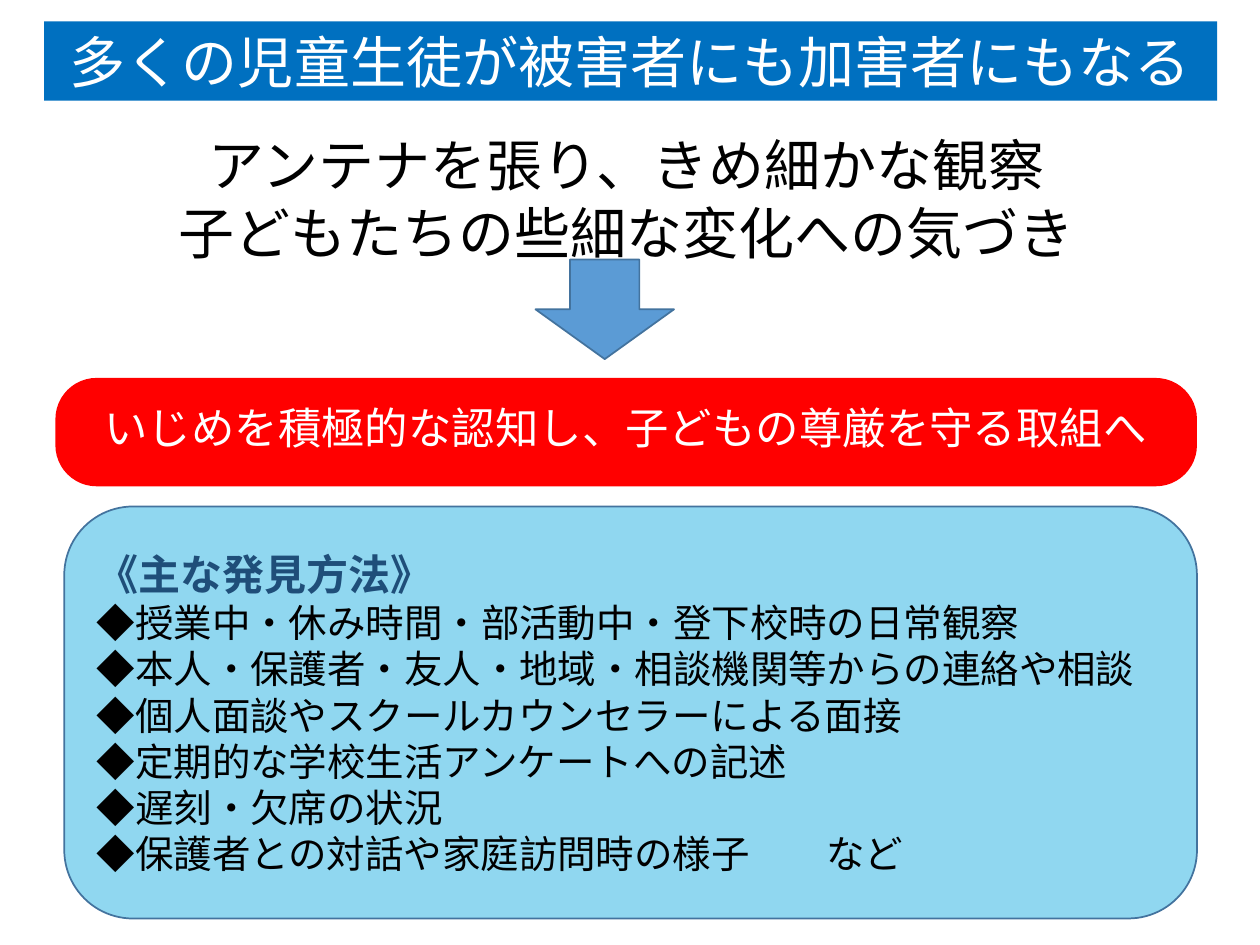
from dataclasses import dataclass

from pptx import Presentation
from pptx.dml.color import RGBColor
from pptx.enum.shapes import MSO_SHAPE as Shape
from pptx.enum.text import MSO_ANCHOR as Anchor, PP_ALIGN as Align
from pptx.oxml.ns import qn
from pptx.util import Inches, Pt
from lxml.etree import SubElement


@dataclass(frozen=True)
class Theme:
    latin_font: str = "Arial"
    japanese_font: str = "Noto Sans CJK JP"
    title_fill: str = "0070C0"
    message_fill: str = "FF0000"
    panel_fill: str = "90D7F0"
    arrow_fill: str = "5B9BD5"
    outline: str = "43739E"
    heading: str = "1F4E79"
    dark: str = "000000"
    light: str = "FFFFFF"
    large: float = 32
    message: float = 24.8
    subheading: float = 24
    body: float = 22


class SlideBuilder:
    """Draws styled elements on the current slide."""

    def __init__(self, slide, theme):
        self.slide = slide
        self.theme = theme

    def shape(self, kind, box, fill, outline=None):
        shape = self.slide.shapes.add_shape(kind, *map(Inches, box))
        shape.shadow.inherit = False
        shape.fill.solid()
        shape.fill.fore_color.rgb = RGBColor.from_string(fill)
        if outline:
            shape.line.color.rgb = RGBColor.from_string(outline)
            shape.line.width = Pt(1)
        else:
            shape.line.fill.background()
        return shape

    def text_box(self, box):
        return self.slide.shapes.add_textbox(*map(Inches, box))

    def set_text(self, shape, lines, size, color, font, align=Align.CENTER, anchor=Anchor.MIDDLE):
        frame = shape.text_frame
        frame.word_wrap = True
        frame.vertical_anchor = anchor
        frame.text = "\n".join(lines)
        for paragraph in frame.paragraphs:
            paragraph.alignment = align
            self.style(paragraph, size, color, font)
        return frame.paragraphs

    def style(self, paragraph, size, color, font, bold=False):
        for run in paragraph.runs:
            run.font.size = Pt(size)
            run.font.bold = bold
            run.font.color.rgb = RGBColor.from_string(color)
            run.font.name = font
            properties = run._r.get_or_add_rPr()
            if properties.find(qn("a:ea")) is None:
                SubElement(properties, qn("a:ea"), typeface=self.theme.japanese_font)


def main():
    theme = Theme()
    presentation = Presentation()
    presentation.slide_width, presentation.slide_height = Inches(10), Inches(7.5)
    slide = presentation.slides.add_slide(presentation.slide_layouts[6])
    builder = SlideBuilder(slide, theme)

    methods = [
        "授業中・休み時間・部活動中・登下校時の日常観察",
        "本人・保護者・友人・地域・相談機関等からの連絡や相談",
        "個人面談やスクールカウンセラーによる面接",
        "定期的な学校生活アンケートへの記述",
        "遅刻・欠席の状況",
        "保護者との対話や家庭訪問時の様子　　など",
    ]
    panel = builder.shape(Shape.ROUNDED_RECTANGLE, (0.51, 4.02, 8.99, 3.27),
                          theme.panel_fill, theme.outline)
    lines = ["《主な発見方法》"] + [f"◆{method}" for method in methods]
    paragraphs = builder.set_text(panel, lines, theme.body, theme.dark,
                                  theme.japanese_font, Align.LEFT)
    builder.style(paragraphs[0], theme.subheading, theme.heading, theme.japanese_font, bold=True)

    title = builder.shape(Shape.RECTANGLE, (0.35, 0.17, 9.31, 0.63), theme.title_fill)
    builder.set_text(title, ["多くの児童生徒が被害者にも加害者にもなる"],
                     theme.large, theme.light, theme.latin_font)

    observation = builder.text_box((0.32, 0.99, 9.31, 1.14))
    builder.set_text(observation, ["アンテナを張り、きめ細かな観察", "子どもたちの些細な変化への気づき"],
                     theme.large, theme.dark, theme.latin_font, anchor=Anchor.TOP)

    builder.shape(Shape.DOWN_ARROW, (4.25, 2.06, 1.1, 0.79), theme.arrow_fill, theme.outline)

    message = builder.shape(Shape.ROUNDED_RECTANGLE, (0.44, 3, 9.06, 0.86), theme.message_fill)
    message.adjustments[0] = 0.38
    paragraphs = builder.set_text(message, ["いじめを積極的な認知し、子どもの尊厳を守る取組へ"],
                                  theme.message, theme.light, theme.japanese_font)
    paragraphs[0].line_spacing = 0.8

    presentation.save("out.pptx")


if __name__ == "__main__":
    main()
